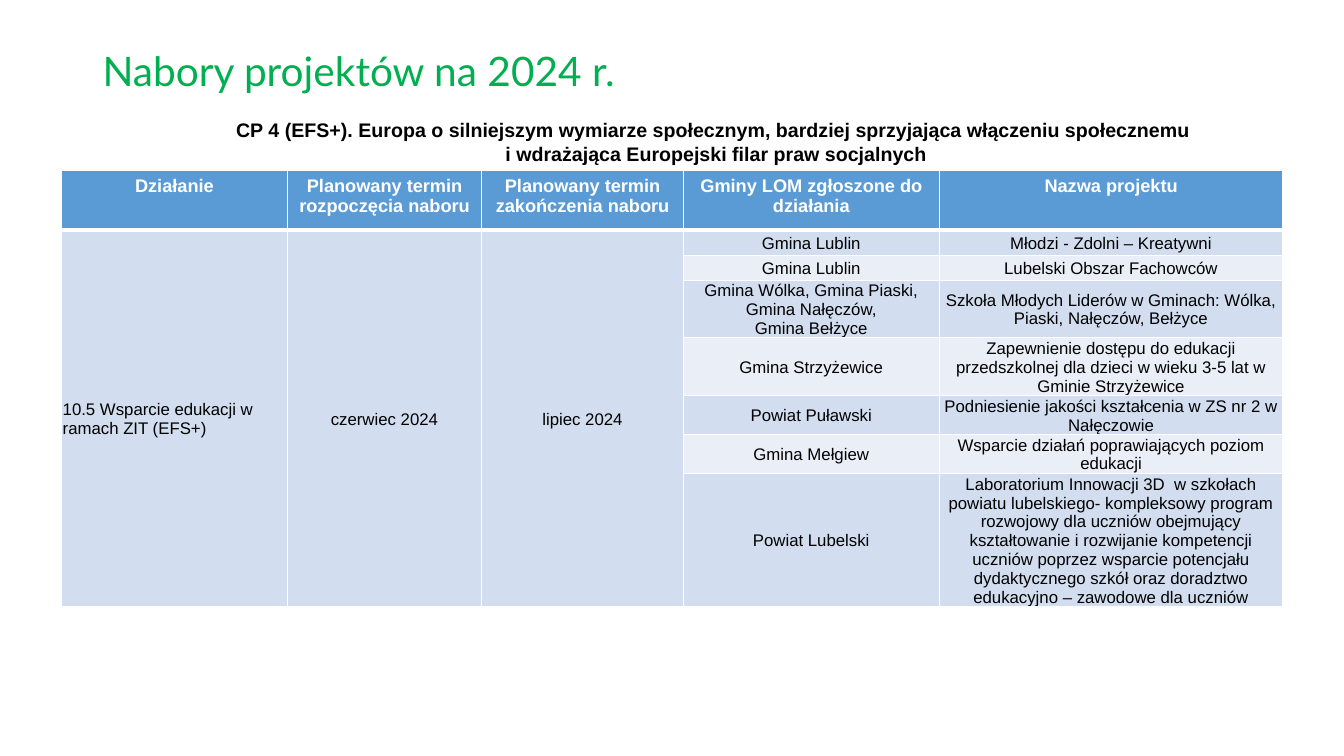
from lxml import etree
from pptx import Presentation
from pptx.dml.color import RGBColor
from pptx.enum.text import MSO_ANCHOR as ANCHOR, MSO_AUTO_SIZE as AUTO, PP_ALIGN as ALIGN
from pptx.oxml.ns import qn
from pptx.util import Cm, Pt

WHITE, BLACK, GREEN, BLUE = "FFFFFF", "000000", "00B050", "5B9BD5"
BANDS = ["D2DEEF", "EAEFF7"]

TITLE_FONT = {"name": "Lato", "size": Pt(29), "bold": False, "color": GREEN}
HEADING_FONT = {"name": "Arial", "size": Pt(14), "bold": True, "color": BLACK}
HEADER_FONT = {"name": "Arial", "size": Pt(13), "bold": True, "color": WHITE}
BODY_FONT = {"name": "Arial", "size": Pt(12), "bold": False, "color": BLACK}

COL_WIDTHS = [5.69, 4.9, 5.08, 6.45, 8.66]
ROW_HEIGHTS = [1.5, 0.63, 0.63, 1.45, 1.46, 0.98, 0.98, 3.36]
HEADERS = [
    "Działanie",
    "Planowany termin rozpoczęcia naboru",
    "Planowany termin zakończenia naboru",
    "Gminy LOM zgłoszone do działania",
    "Nazwa projektu",
]
CALL = ["10.5 Wsparcie edukacji w ramach ZIT (EFS+)", "czerwiec 2024", "lipiec 2024"]
PROJECTS = [
    ("Gmina Lublin", "Młodzi - Zdolni – Kreatywni"),
    ("Gmina Lublin", "Lubelski Obszar Fachowców"),
    ("Gmina Wólka, Gmina Piaski, Gmina Nałęczów,\nGmina Bełżyce",
     "Szkoła Młodych Liderów w Gminach: Wólka, Piaski, Nałęczów, Bełżyce"),
    ("Gmina Strzyżewice",
     "Zapewnienie dostępu do edukacji przedszkolnej dla dzieci w wieku 3-5 lat "
     "w Gminie Strzyżewice"),
    ("Powiat Puławski", "Podniesienie jakości kształcenia w ZS nr 2 w Nałęczowie"),
    ("Gmina Mełgiew", "Wsparcie działań poprawiających poziom edukacji"),
    ("Powiat Lubelski",
     "Laboratorium Innowacji 3D  w szkołach powiatu lubelskiego- kompleksowy program "
     "rozwojowy dla uczniów obejmujący kształtowanie i rozwijanie kompetencji uczniów "
     "poprzez wsparcie potencjału dydaktycznego szkół oraz doradztwo edukacyjno – "
     "zawodowe dla uczniów"),
]


def rgb(value):
    return RGBColor.from_string(value)


def set_attrs(obj, values):
    for name, value in values.items():
        setattr(obj, name, value)


def write(tf, text, font, align):
    tf.text = text
    for p in tf.paragraphs:
        p.alignment = align
        for r in p.runs:
            set_attrs(r.font, {k: v for k, v in font.items() if k != "color"})
            r.font.color.rgb = rgb(font["color"])


def add_borders(cell, widths):
    tc_pr = cell._tc.get_or_add_tcPr()
    for side, width in widths.items():
        ln = etree.SubElement(tc_pr, qn("a:ln" + side), w=str(Pt(width)))
        fill = etree.SubElement(ln, qn("a:solidFill"))
        etree.SubElement(fill, qn("a:srgbClr"), val=WHITE)


def format_cell(cell, row):
    # Lines come before the fill in the cell properties
    add_borders(cell, {"L": 1, "R": 1, "T": 3 if row == 1 else 1, "B": 3 if row == 0 else 1})
    cell.fill.solid()
    if row == 0:
        cell.fill.fore_color.rgb = rgb(BLUE)
        return
    cell.fill.fore_color.rgb = rgb(BANDS[(row - 1) % 2])
    set_attrs(cell, {
        "vertical_anchor": ANCHOR.MIDDLE, "margin_left": Cm(0.03),
        "margin_right": Cm(0.03), "margin_top": Cm(0.03), "margin_bottom": 0,
    })


def place_title(s, left, top, width, height):
    sp = s.shapes.title
    set_attrs(sp, {"left": left, "top": top, "width": width, "height": height})
    tf = sp.text_frame
    set_attrs(tf, {"vertical_anchor": ANCHOR.MIDDLE, "auto_size": AUTO.NONE})
    write(tf, "Nabory projektów na 2024 r.", TITLE_FONT, ALIGN.LEFT)
    tf.paragraphs[0].line_spacing = 0.9


def place_heading(s, left, top, width, height):
    tf = s.shapes.add_textbox(left, top, width, height).text_frame
    set_attrs(tf, {"word_wrap": False, "auto_size": AUTO.SHAPE_TO_FIT_TEXT})
    write(tf, "CP 4 (EFS+). Europa o silniejszym wymiarze społecznym, bardziej sprzyjająca "
              "włączeniu społecznemu \vi wdrażająca Europejski filar praw socjalnych",
          HEADING_FONT, ALIGN.CENTER)


def place_table(s, left, top, width, height):
    table = s.shapes.add_table(len(ROW_HEIGHTS), len(COL_WIDTHS), left, top, width, height).table
    for column, size in zip(table.columns, COL_WIDTHS):
        column.width = Cm(size)
    for row, size in zip(table.rows, ROW_HEIGHTS):
        row.height = Cm(size)
    for i, row in enumerate(table.rows):
        for cell in row.cells:
            format_cell(cell, i)

    # Header row
    for col, text in enumerate(HEADERS):
        write(table.cell(0, col).text_frame, text, HEADER_FONT, ALIGN.CENTER)
    # Call details, each spanning all projects
    for col, text in enumerate(CALL):
        cell = table.cell(1, col)
        cell.merge(table.cell(len(PROJECTS), col))
        write(cell.text_frame, text, BODY_FONT, ALIGN.CENTER if col else ALIGN.LEFT)
    # Municipalities and their projects
    for i, project in enumerate(PROJECTS, 1):
        for col, text in enumerate(project, len(CALL)):
            write(table.cell(i, col).text_frame, text, BODY_FONT, ALIGN.CENTER)


def main():
    prs = Presentation()
    set_attrs(prs, {"slide_width": Cm(33.87), "slide_height": Cm(19.05)})
    s = prs.slides.add_slide(prs.slide_layouts[5])
    place_title(s, Cm(2.33), Cm(0), Cm(29.21), Cm(3.68))
    place_table(s, Cm(1.55), Cm(4.3), Cm(sum(COL_WIDTHS)), Cm(sum(ROW_HEIGHTS)))
    place_heading(s, Cm(5.64), Cm(2.85), Cm(24.82), Cm(1.45))
    prs.save("out.pptx")


if __name__ == "__main__":
    main()
